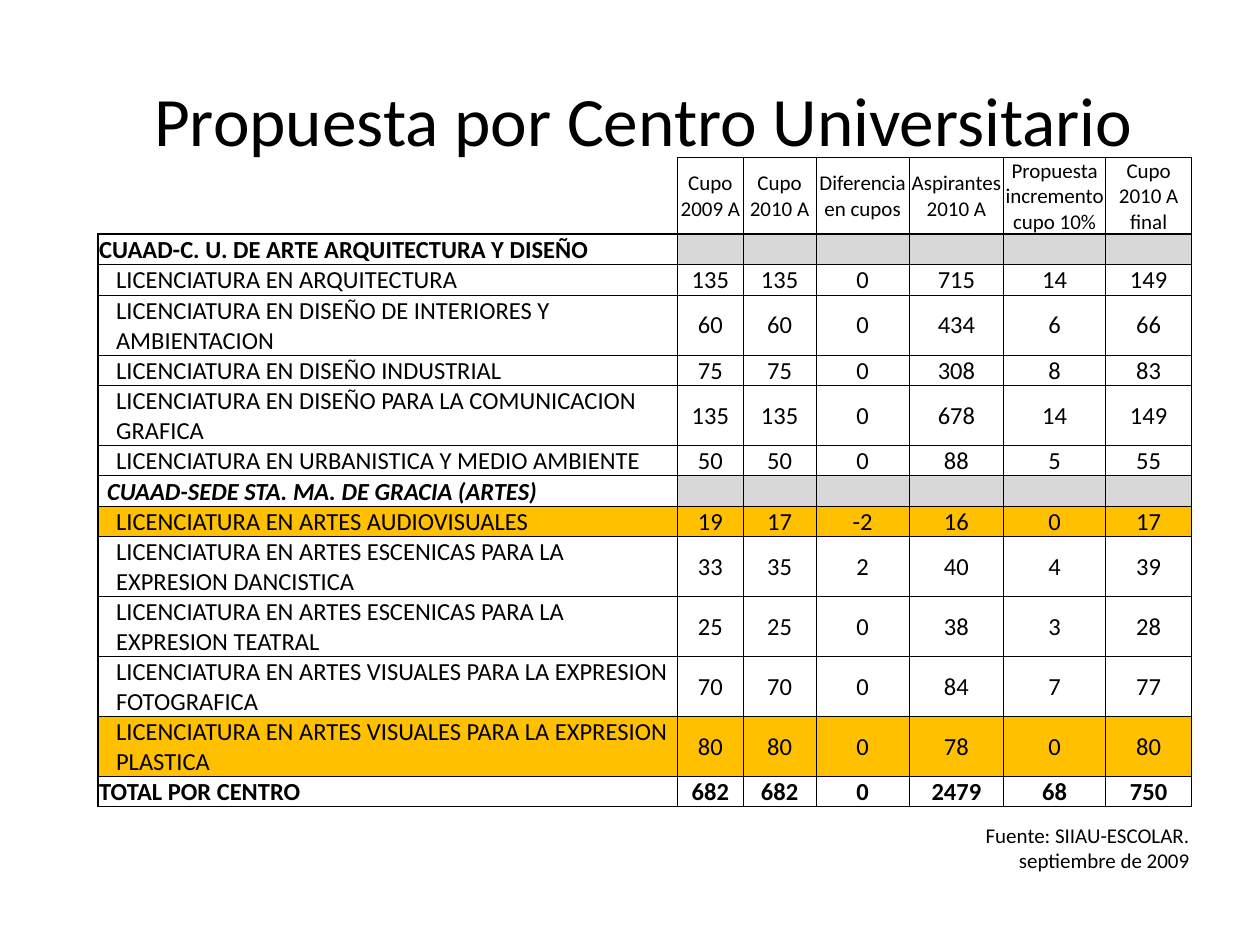
import dataclasses
import enum

import lxml.etree
import pptx
import pptx.dml.color
import pptx.enum.text
import pptx.oxml.ns
import pptx.slide
import pptx.table
import pptx.text.text
import pptx.util

Cm = pptx.util.Cm
Pt = pptx.util.Pt
Align = pptx.enum.text.PP_ALIGN
Anchor = pptx.enum.text.MSO_ANCHOR


@dataclasses.dataclass(frozen=True)
class Theme:
    font: str = "Calibri"
    ink: str = "000000"
    section: str = "D8D8D8"
    highlight: str = "FFC000"
    title_size: float = 39.6
    small_size: float = 12
    body_size: float = 14
    thin: float = 0.5
    thick: float = 1
    inset: float = 0.02
    header_height: float = 1.55
    line_heights: tuple[float, float] = (0.61, 1.2)


class Kind(enum.Enum):
    SECTION = enum.auto()
    SUBSECTION = enum.auto()
    DEGREE = enum.auto()
    HIGHLIGHT = enum.auto()
    TOTAL = enum.auto()


@dataclasses.dataclass(frozen=True)
class Row:
    label: str
    values: tuple[int, ...] = ()
    kind: Kind = Kind.DEGREE
    lines: int = 1


@dataclasses.dataclass(frozen=True)
class TextStyle:
    size: float
    align: Align = Align.CENTER
    bold: bool = False
    italic: bool = False


@dataclasses.dataclass(frozen=True)
class Borders:
    left: float
    right: float
    top: float
    bottom: float


THEME = Theme()
COLUMN_WIDTHS = (11.68, 1.32, 1.47, 1.88, 1.9, 2.06, 1.73)
HEADERS = (
    "",
    "Cupo 2009 A",
    "Cupo 2010 A",
    "Diferencia en cupos",
    "Aspirantes 2010 A",
    "Propuesta incremento cupo 10%",
    "Cupo 2010 A final",
)
ROWS = (
    Row("CUAAD-C. U. DE ARTE ARQUITECTURA Y DISEÑO", kind=Kind.SECTION),
    Row("LICENCIATURA EN ARQUITECTURA", (135, 135, 0, 715, 14, 149)),
    Row("LICENCIATURA EN DISEÑO DE INTERIORES Y AMBIENTACION", (60, 60, 0, 434, 6, 66), lines=2),
    Row("LICENCIATURA EN DISEÑO INDUSTRIAL", (75, 75, 0, 308, 8, 83)),
    Row("LICENCIATURA EN DISEÑO PARA LA COMUNICACION GRAFICA", (135, 135, 0, 678, 14, 149), lines=2),
    Row("LICENCIATURA EN URBANISTICA Y MEDIO AMBIENTE", (50, 50, 0, 88, 5, 55)),
    Row("CUAAD-SEDE STA. MA. DE GRACIA (ARTES)", kind=Kind.SUBSECTION),
    Row("LICENCIATURA EN ARTES AUDIOVISUALES", (19, 17, -2, 16, 0, 17), Kind.HIGHLIGHT),
    Row("LICENCIATURA EN ARTES ESCENICAS PARA LA EXPRESION DANCISTICA", (33, 35, 2, 40, 4, 39), lines=2),
    Row("LICENCIATURA EN ARTES ESCENICAS PARA LA EXPRESION TEATRAL", (25, 25, 0, 38, 3, 28), lines=2),
    Row("LICENCIATURA EN ARTES VISUALES PARA LA EXPRESION FOTOGRAFICA", (70, 70, 0, 84, 7, 77), lines=2),
    Row("LICENCIATURA EN ARTES VISUALES PARA LA EXPRESION PLASTICA", (80, 80, 0, 78, 0, 80), Kind.HIGHLIGHT, 2),
    Row("TOTAL POR CENTRO", (682, 682, 0, 2479, 68, 750), Kind.TOTAL),
)
LABEL_INDENTS = {Kind.SUBSECTION: 0.18, Kind.DEGREE: 0.36, Kind.HIGHLIGHT: 0.36}


def write_paragraph(paragraph: pptx.text.text._Paragraph, text: str, style: TextStyle) -> None:
    paragraph.alignment = style.align
    if not text:
        end = lxml.etree.SubElement(paragraph._p, pptx.oxml.ns.qn("a:endParaRPr"))
        end.set("sz", str(int(style.size * 100)))
        return
    run = paragraph.add_run()
    run.text = text
    run.font.name = THEME.font
    run.font.size = Pt(style.size)
    run.font.bold = style.bold
    run.font.italic = style.italic
    run.font.color.rgb = pptx.dml.color.RGBColor.from_string(THEME.ink)


def add_text(slide: pptx.slide.Slide, box: tuple[float, ...], lines: tuple[str, ...],
             style: TextStyle, anchor: Anchor) -> None:
    frame = slide.shapes.add_textbox(*(Cm(length) for length in box)).text_frame
    frame.word_wrap = True
    frame.vertical_anchor = anchor
    for index, line in enumerate(lines):
        paragraph = frame.add_paragraph() if index else frame.paragraphs[0]
        write_paragraph(paragraph, line, style)


def set_borders(cell: pptx.table._Cell, borders: Borders) -> None:
    properties = cell._tc.get_or_add_tcPr()
    for side, width in dataclasses.asdict(borders).items():
        tag = pptx.oxml.ns.qn(f"a:ln{side[0].upper()}")
        line = lxml.etree.SubElement(properties, tag, w=str(int(Pt(width))))
        if not width:
            lxml.etree.SubElement(line, pptx.oxml.ns.qn("a:noFill"))
            continue
        fill = lxml.etree.SubElement(line, pptx.oxml.ns.qn("a:solidFill"))
        lxml.etree.SubElement(fill, pptx.oxml.ns.qn("a:srgbClr"), val=THEME.ink)


def fill_cell(cell: pptx.table._Cell, text: str, style: TextStyle, borders: Borders,
              color: str | None = None, indent: float = THEME.inset) -> None:
    cell.margin_left = Cm(indent)
    cell.margin_right = cell.margin_top = Cm(THEME.inset)
    cell.margin_bottom = Cm(0)
    cell.vertical_anchor = Anchor.MIDDLE
    set_borders(cell, borders)
    if color:
        cell.fill.solid()
        cell.fill.fore_color.rgb = pptx.dml.color.RGBColor.from_string(color)
    else:
        cell.fill.background()
    write_paragraph(cell.text_frame.paragraphs[0], text, style)


def fill_header(table: pptx.table.Table) -> None:
    for column, text in enumerate(HEADERS):
        outer = THEME.thin if column else 0
        left = THEME.thick if column == 1 else outer
        right = outer or THEME.thick
        borders = Borders(left, right, outer, THEME.thick)
        fill_cell(table.cell(0, column), text, TextStyle(THEME.small_size), borders)


def fill_row(table: pptx.table.Table, index: int, row: Row) -> None:
    bold = row.kind in (Kind.SECTION, Kind.SUBSECTION, Kind.TOTAL)
    top = THEME.thick if index == 1 else THEME.thin
    bottom = THEME.thick if row.kind is Kind.TOTAL else THEME.thin
    highlight = THEME.highlight if row.kind is Kind.HIGHLIGHT else None
    label_style = TextStyle(THEME.body_size, Align.LEFT, bold, row.kind is Kind.SUBSECTION)
    fill_cell(table.cell(index, 0), row.label, label_style,
              Borders(THEME.thick, THEME.thin, top, bottom), highlight,
              LABEL_INDENTS.get(row.kind, THEME.inset))
    values = row.values or ("",) * (len(HEADERS) - 1)
    color = highlight if row.values else THEME.section
    for column, value in enumerate(values, start=1):
        fill_cell(table.cell(index, column), str(value), TextStyle(THEME.body_size, bold=bold),
                  Borders(THEME.thin, THEME.thin, top, bottom), color)


def add_quota_table(slide: pptx.slide.Slide) -> None:
    heights = [THEME.header_height] + [THEME.line_heights[row.lines - 1] for row in ROWS]
    table = slide.shapes.add_table(len(heights), len(HEADERS), Cm(1.98), Cm(3.17),
                                   Cm(sum(COLUMN_WIDTHS)), Cm(sum(heights))).table
    table.first_row = False
    table.horz_banding = False
    for column, width in zip(table.columns, COLUMN_WIDTHS):
        column.width = Cm(width)
    for table_row, height in zip(table.rows, heights):
        table_row.height = Cm(height)
    fill_header(table)
    for index, row in enumerate(ROWS, start=1):
        fill_row(table, index, row)


def main() -> None:
    presentation = pptx.Presentation()
    presentation.slide_width = Cm(25.4)
    presentation.slide_height = Cm(19.05)
    slide = presentation.slides.add_slide(presentation.slide_layouts[6])
    add_text(slide, (2.18, 1.4, 21.59, 1.98), ("Propuesta por Centro Universitario",),
             TextStyle(THEME.title_size), Anchor.MIDDLE)
    add_text(slide, (17.65, 16.46, 6.58, 1.27), ("Fuente: SIIAU-ESCOLAR.", "septiembre de 2009"),
             TextStyle(THEME.small_size, Align.RIGHT), Anchor.TOP)
    add_quota_table(slide)
    presentation.save("out.pptx")


if __name__ == "__main__":
    main()
